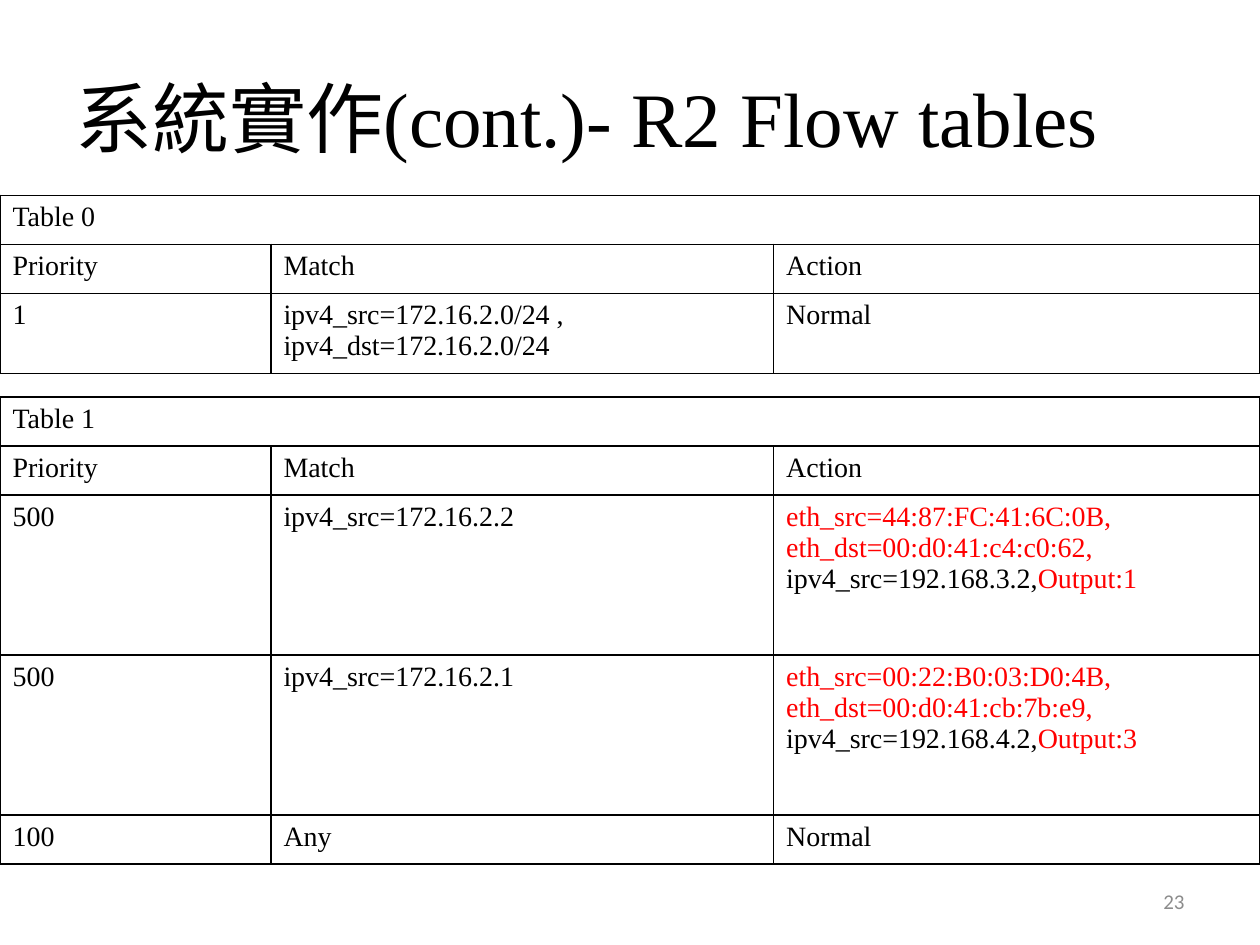
from dataclasses import dataclass

from lxml import etree
from pptx import Presentation, util as u
from pptx.dml.color import RGBColor
from pptx.enum import text
from pptx.oxml import ns

WIDTH, HEIGHT = 10, 7.5
COLUMN_SHARES = (0.215, 0.399, 0.386)
ROW, TALL_ROW = 0.39, 1.27
SERIF = "Times New Roman"
BLACK, RED, GREY = "000000", "FF0000", "8C8C8C"
HEADINGS = ("Priority", "Match", "Action")


@dataclass
class Run:
    words: str
    color: str = BLACK


@dataclass
class FlowTable:
    name: str
    top: float
    flows: list  # rows of (priority, match, action)
    heights: list


def rgb(color: str) -> RGBColor:
    return RGBColor.from_string(color)


def write(frame, content, *, size: float = 16, font: str = SERIF,
          color: str = BLACK, align=text.PP_ALIGN.LEFT) -> None:
    """Write a string, or a list of paragraphs that are lists of runs."""
    paragraphs = [[Run(content, color)]] if isinstance(content, str) else content
    for index, runs in enumerate(paragraphs):
        paragraph = frame.add_paragraph() if index else frame.paragraphs[0]
        paragraph.alignment = align
        for part in runs:
            for number, line in enumerate(part.words.split("\n")):
                if number:
                    paragraph.add_line_break()
                run = paragraph.add_run()
                run.text = line
                run.font.size = u.Pt(size)
                run.font.name = font
                run.font.color.rgb = rgb(part.color)


def add_text(slide, left: float, top: float, width: float, height: float,
             content: str, **style) -> None:
    box = slide.shapes.add_textbox(*map(u.Inches, (left, top, width, height)))
    box.text_frame.word_wrap = True
    box.text_frame.vertical_anchor = text.MSO_ANCHOR.MIDDLE
    write(box.text_frame, content, **style)


def outline(cell, color: str = BLACK, points: float = 1) -> None:
    """Clear the fill and draw a line on all four sides."""
    cell.fill.background()
    properties = cell._tc.get_or_add_tcPr()
    for index, side in enumerate(("lnL", "lnR", "lnT", "lnB")):
        line = etree.Element(ns.qn(f"a:{side}"), w=str(u.Pt(points)))
        fill = etree.SubElement(line, ns.qn("a:solidFill"))
        etree.SubElement(fill, ns.qn("a:srgbClr"), val=color)
        properties.insert(index, line)


def add_flow_table(slide, flow_table: FlowTable) -> None:
    rows = [(flow_table.name, "", ""), HEADINGS, *flow_table.flows]
    heights = [ROW, ROW, *flow_table.heights]
    frame = slide.shapes.add_table(
        len(rows), len(HEADINGS), 0, u.Inches(flow_table.top),
        u.Inches(WIDTH), u.Inches(sum(heights)))
    table = frame.table
    table.first_row = table.horz_banding = False
    for column, share in zip(table.columns, COLUMN_SHARES):
        column.width = u.Inches(WIDTH * share)
    for row, height in zip(table.rows, heights):
        row.height = u.Inches(height)
    for row, contents in zip(table.rows, rows):
        for cell, content in zip(row.cells, contents):
            outline(cell)
            if content:
                write(cell.text_frame, content)
    table.cell(0, 0).merge(table.cell(0, len(HEADINGS) - 1))


def rewrite(source_mac: str, target_mac: str, address: str, port: int) -> list:
    """Action that rewrites the addresses and sends to a port."""
    return [[Run(f"eth_src={source_mac},\neth_dst={target_mac},", RED)],
            [Run(f"ipv4_src={address},"), Run(f"Output:{port}", RED)]]


FLOW_TABLES = (
    FlowTable("Table 0", 1.55, [
        ("1", "ipv4_src=172.16.2.0/24 ,\nipv4_dst=172.16.2.0/24", "Normal"),
    ], [0.59]),
    FlowTable("Table 1", 3.15, [
        ("500", "ipv4_src=172.16.2.2",
         rewrite("44:87:FC:41:6C:0B", "00:d0:41:c4:c0:62", "192.168.3.2", 1)),
        ("500", "ipv4_src=172.16.2.1",
         rewrite("00:22:B0:03:D0:4B", "00:d0:41:cb:7b:e9", "192.168.4.2", 3)),
        ("100", "Any", "Normal"),
    ], [TALL_ROW, TALL_ROW, ROW]),
)


def main() -> None:
    presentation = Presentation()
    presentation.slide_width = u.Inches(WIDTH)
    presentation.slide_height = u.Inches(HEIGHT)
    slide = presentation.slides.add_slide(presentation.slide_layouts[6])

    # Title and page number
    add_text(slide, 0.05 * WIDTH, 0.04 * HEIGHT, 0.9 * WIDTH, 1.25,
             "系統實作(cont.)- R2 Flow tables", size=44)
    add_text(slide, 7.17, 6.95, 2.33, 0.4, "23", size=12, font="Calibri",
             color=GREY, align=text.PP_ALIGN.RIGHT)

    # Flow tables
    for flow_table in FLOW_TABLES:
        add_flow_table(slide, flow_table)

    presentation.save("out.pptx")


if __name__ == "__main__":
    main()
